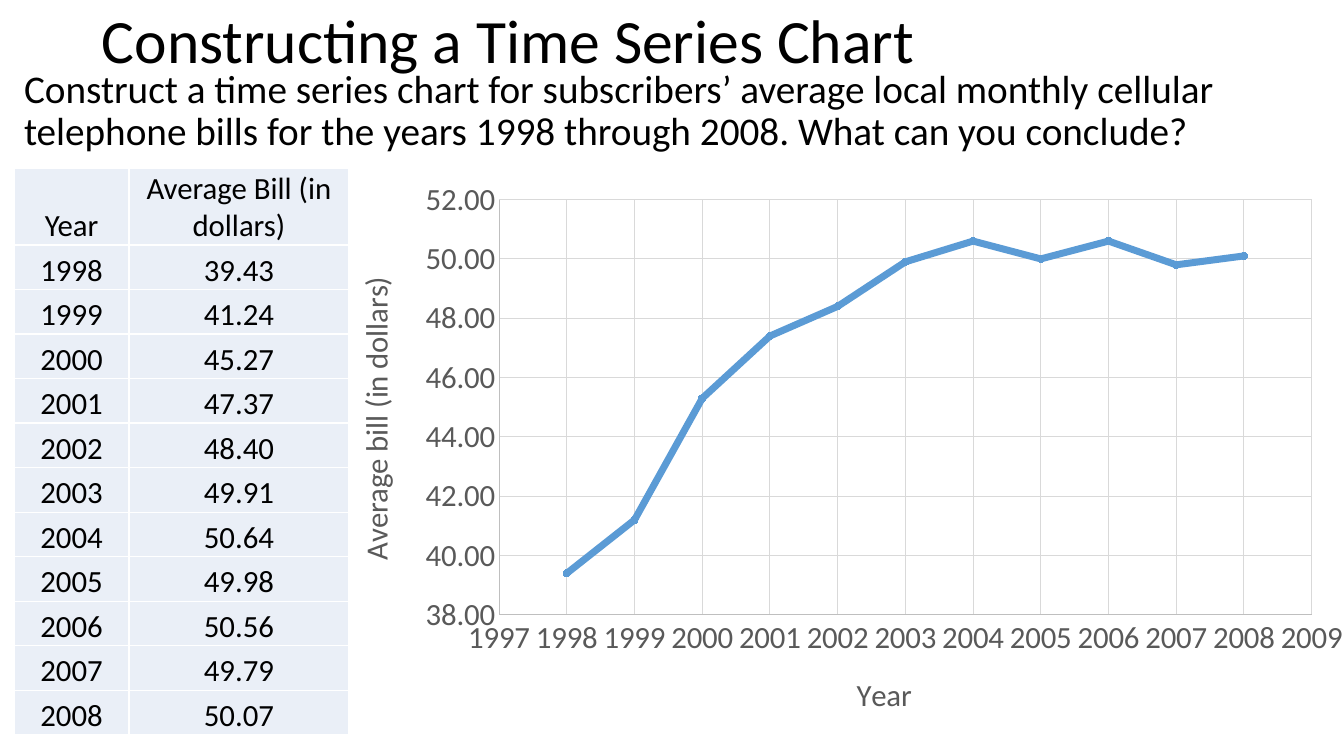
import pptx
import pptx.chart.data
import pptx.dml.color
import pptx.enum.chart
import pptx.enum.text
import pptx.oxml
import pptx.oxml.ns
import pptx.util

Inches, Pt = pptx.util.Inches, pptx.util.Pt
qn = pptx.oxml.ns.qn
RGBColor = pptx.dml.color.RGBColor

BLACK = RGBColor(0x00, 0x00, 0x00)
CELL_BLUE = RGBColor(0xEA, 0xEF, 0xF7)
LINE_BLUE = RGBColor(0x5B, 0x9B, 0xD5)
LABEL_GREY = RGBColor(0x59, 0x59, 0x59)
AXIS_GREY = RGBColor(0xBF, 0xBF, 0xBF)
GRID_GREY = RGBColor(0xD9, 0xD9, 0xD9)

YEARS = range(1998, 2009)
BILLS = [39.43, 41.24, 45.27, 47.37, 48.40, 49.91,
         50.64, 49.98, 50.56, 49.79, 50.07]
TABLE_HEIGHT, HEADER_HEIGHT = 5.62, 0.76
CHART_WIDTH, CHART_HEIGHT = 10.24, 5.68


def style_font(font, size, color):
    font.name = "Calibri"
    font.size = Pt(size)
    font.bold = False
    font.color.rgb = color


def place_in_chart(parent, position, **lengths):
    """Fix a chart part at x, y (and w, h), given in inches within the chart."""
    for old in parent.findall(qn("c:layout")):
        parent.remove(old)
    target = '<c:layoutTarget val="inner"/>' if "w" in lengths else ""
    modes = '<c:xMode val="edge"/><c:yMode val="edge"/>'
    sizes = "".join(
        f'<c:{key} val="{value / (CHART_WIDTH if key in "xw" else CHART_HEIGHT):.4f}"/>'
        for key, value in lengths.items())
    parent.insert(position, pptx.oxml.parse_xml(
        f'<c:layout {pptx.oxml.ns.nsdecls("c")}><c:manualLayout>'
        f'{target}{modes}{sizes}</c:manualLayout></c:layout>'))


deck = pptx.Presentation()
deck.slide_width, deck.slide_height = Inches(13.33), Inches(7.5)
page = deck.slides.add_slide(deck.slide_layouts[5])

# Title and question
title = page.shapes.title
title.left, title.top = Inches(0.91), Inches(-0.29)
title.width, title.height = Inches(11.5), Inches(1.45)
question = page.shapes.add_textbox(Inches(0.14), Inches(0.64), Inches(13.19), Inches(1.03))
for box, size, before, anchor, text in (
        (title, 44, 0, pptx.enum.text.MSO_ANCHOR.MIDDLE, "Constructing a Time Series Chart"),
        (question, 28, 10, pptx.enum.text.MSO_ANCHOR.TOP,
         "Construct a time series chart for subscribers’ average local monthly cellular "
         "telephone bills for the years 1998 through 2008. What can you conclude?")):
    frame = box.text_frame
    frame.text = text
    frame.word_wrap = True
    frame.vertical_anchor = anchor
    para = frame.paragraphs[0]
    para.alignment = pptx.enum.text.PP_ALIGN.LEFT
    para.line_spacing = 0.9
    para.space_before = Pt(before)
    style_font(para.runs[0].font, size, BLACK)

# Table of bills
rows = [("Year", "Average Bill (in dollars)")]
rows += [(str(year), f"{bill:.2f}") for year, bill in zip(YEARS, BILLS)]
row_height = (TABLE_HEIGHT - HEADER_HEIGHT) / len(BILLS)
table = page.shapes.add_table(len(rows), 2, Inches(0.14), Inches(1.67),
                              Inches(3.32), Inches(TABLE_HEIGHT)).table
table.columns[0].width, table.columns[1].width = Inches(1.14), Inches(2.18)
for row_index, row in enumerate(rows):
    table.rows[row_index].height = Inches(row_height if row_index else HEADER_HEIGHT)
    for column_index, text in enumerate(row):
        cell = table.cell(row_index, column_index)
        cell.text = text
        cell.margin_left = cell.margin_right = cell.margin_top = Inches(0.01)
        cell.margin_bottom = 0
        cell.vertical_anchor = pptx.enum.text.MSO_ANCHOR.BOTTOM
        para = cell.text_frame.paragraphs[0]
        para.alignment = pptx.enum.text.PP_ALIGN.CENTER
        style_font(para.runs[0].font, 22, BLACK)
        for side in ("lnL", "lnR", "lnT", "lnB"):
            cell._tc.get_or_add_tcPr().append(pptx.oxml.parse_xml(
                f'<a:{side} {pptx.oxml.ns.nsdecls("a")} w="12700"><a:solidFill>'
                f'<a:srgbClr val="FFFFFF"/></a:solidFill></a:{side}>'))
        cell.fill.solid()
        cell.fill.fore_color.rgb = CELL_BLUE

# Time series chart
data = pptx.chart.data.XyChartData()
points = data.add_series("Series 1")
for year, bill in zip(YEARS, BILLS):
    points.add_data_point(year, round(bill, 1))
chart = page.shapes.add_chart(
    pptx.enum.chart.XL_CHART_TYPE.XY_SCATTER_LINES, Inches(3.28), Inches(1.67),
    Inches(CHART_WIDTH), Inches(CHART_HEIGHT), data).chart
chart.has_legend = False
chart.has_title = False
style_font(chart.font, 22, BLACK)
chart.plots[0].vary_by_categories = False
place_in_chart(chart._chartSpace.chart.plotArea, 0, x=1.67, y=0.31, w=8.06, h=4.12)

series = chart.plots[0].series[0]
series.smooth = False
series.format.line.color.rgb = LINE_BLUE
series.format.line.width = Pt(5)
series.marker.style = pptx.enum.chart.XL_MARKER_STYLE.CIRCLE
series.marker.size = 5
series.marker.format.fill.solid()
series.marker.format.fill.fore_color.rgb = LINE_BLUE
series.marker.format.line.color.rgb = LINE_BLUE

# Axes
for axis, text, low, high, step, number_format, turn, left, top in (
        (chart.category_axis, "Year", 1997, 2009, 1, "General", 0, 5.16, 4.96),
        (chart.value_axis, "Average bill (in dollars)", 38, 52, 2, "0.00", -90, 0.18, 1.02)):
    axis.minimum_scale, axis.maximum_scale, axis.major_unit = low, high, step
    axis.major_tick_mark = axis.minor_tick_mark = pptx.enum.chart.XL_TICK_MARK.NONE
    axis.has_major_gridlines = True
    for line, color in ((axis.format.line, AXIS_GREY),
                        (axis.major_gridlines.format.line, GRID_GREY)):
        line.color.rgb = color
        line.width = Pt(0.75)
    axis.tick_labels.number_format = number_format
    axis.tick_labels.number_format_is_linked = False
    style_font(axis.tick_labels.font, 22, LABEL_GREY)
    frame = axis.axis_title.text_frame
    frame.text = text
    style_font(frame.paragraphs[0].runs[0].font, 22, LABEL_GREY)
    frame._txBody.find(qn("a:bodyPr")).set("rot", str(turn * 60000))
    place_in_chart(axis.axis_title._element, 1, x=left, y=top)

deck.save("out.pptx")
